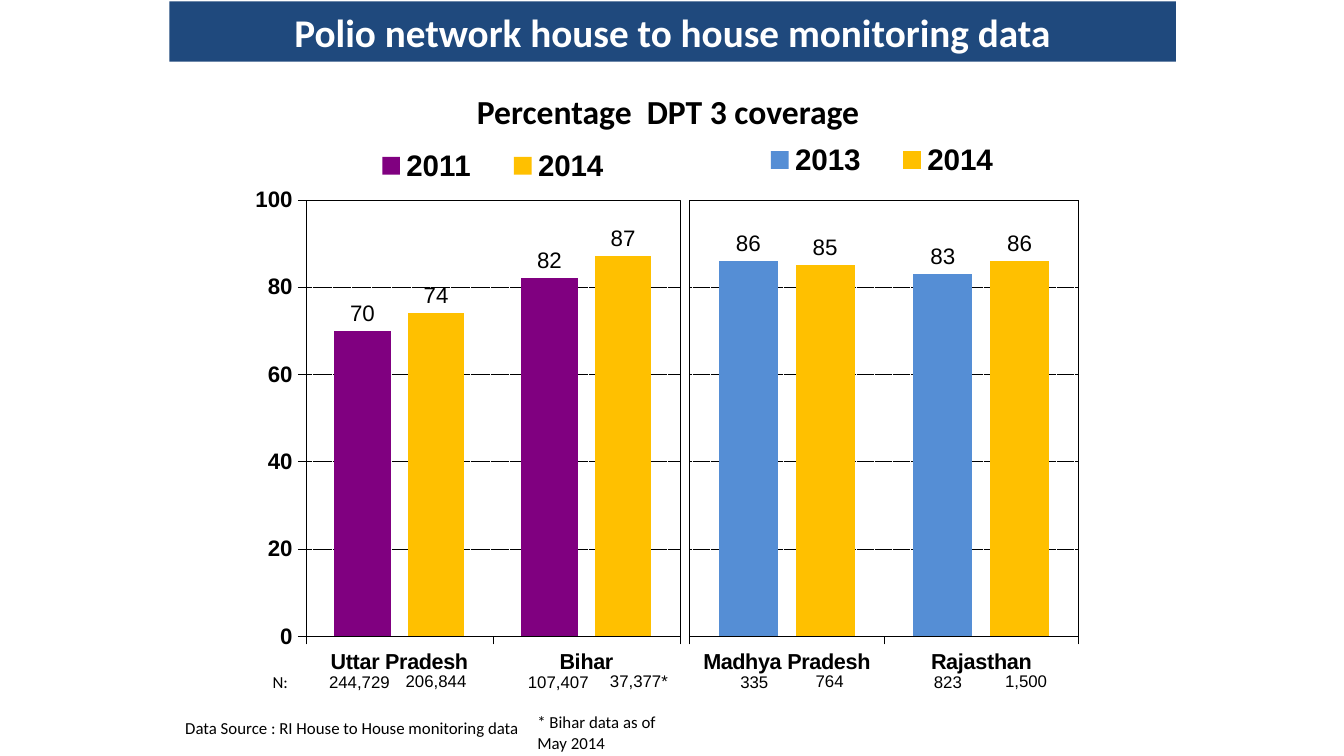
from pptx import Presentation
from pptx.chart.data import CategoryChartData
from pptx.dml.color import RGBColor
from pptx.enum.chart import XL_CHART_TYPE, XL_LABEL_POSITION, XL_LEGEND_POSITION, XL_TICK_MARK
from pptx.enum.dml import MSO_LINE
from pptx.enum.text import MSO_ANCHOR, PP_ALIGN
from pptx.oxml import parse_xml
from pptx.oxml.ns import nsdecls, qn
from pptx.util import Inches, Pt

BLACK = RGBColor(0x00, 0x00, 0x00)
WHITE = RGBColor(0xFF, 0xFF, 0xFF)
NAVY = RGBColor(0x1F, 0x49, 0x7D)
PURPLE = RGBColor(0x80, 0x00, 0x80)
BLUE = RGBColor(0x55, 0x8E, 0xD5)
GOLD = RGBColor(0xFF, 0xC0, 0x00)

HAIRLINE = Pt(0.15)
CHART_TOP, CHART_WIDTH, CHART_HEIGHT = 0.98, 3.29, 4.22


def set_font(font, size, bold=False, name="Arial", color=BLACK):
    font.name = name
    font.size = Pt(size)
    font.bold = bold
    font.color.rgb = color


def write(paragraph, text, size, **style):
    run = paragraph.add_run()
    run.text = text
    set_font(run.font, size, **style)


def add_title(slide, left, top, width, height):
    title = slide.shapes.title
    title.left, title.top = Inches(left), Inches(top)
    title.width, title.height = Inches(width), Inches(height)
    title.fill.solid()
    title.fill.fore_color.rgb = NAVY
    title.text_frame.vertical_anchor = MSO_ANCHOR.MIDDLE
    paragraph = title.text_frame.paragraphs[0]
    paragraph.alignment = PP_ALIGN.CENTER
    write(paragraph, "Polio network house to house monitoring data", 21,
          bold=True, name="Calibri", color=WHITE)


def add_text(slide, left, top, width, height, text, size=9,
             wrap=True, align=PP_ALIGN.LEFT, **style):
    box = slide.shapes.add_textbox(Inches(left), Inches(top), Inches(width), Inches(height))
    box.text_frame.word_wrap = wrap
    paragraph = box.text_frame.paragraphs[0]
    paragraph.alignment = align
    write(paragraph, text, size, **style)


def make_layout(x, y, width, height, inner=False):
    target = '<c:layoutTarget val="inner"/>' if inner else ""
    return parse_xml(
        f'<c:layout {nsdecls("c")}><c:manualLayout>{target}'
        '<c:xMode val="edge"/><c:yMode val="edge"/>'
        f'<c:x val="{x}"/><c:y val="{y}"/><c:w val="{width}"/><c:h val="{height}"/>'
        '</c:manualLayout></c:layout>')


def make_frame(line):
    return parse_xml(f'<c:spPr {nsdecls("c", "a")}><a:noFill/>{line}</c:spPr>')


def replace_layout(parent, index, layout):
    for old in parent.findall(qn("c:layout")):
        parent.remove(old)
    parent.insert(index, layout)


def style_axis(axis, size):
    axis.major_tick_mark = XL_TICK_MARK.OUTSIDE
    axis.minor_tick_mark = XL_TICK_MARK.NONE
    axis.format.line.color.rgb = BLACK
    axis.format.line.width = HAIRLINE
    set_font(axis.tick_labels.font, size, bold=True)


def style_value_axis(axis, visible):
    axis.minimum_scale, axis.maximum_scale, axis.major_unit = 0, 100, 20
    axis.has_major_gridlines = True
    gridline = axis.major_gridlines.format.line
    gridline.color.rgb = BLACK
    gridline.width = HAIRLINE
    gridline.dash_style = MSO_LINE.SQUARE_DOT
    axis.tick_labels.number_format = "0"
    axis.tick_labels.number_format_is_linked = False
    style_axis(axis, 12)
    axis.visible = visible


def style_series(series, color):
    series.format.fill.solid()
    series.format.fill.fore_color.rgb = color
    series.invert_if_negative = False
    labels = series.data_labels
    labels.show_value = True
    labels.number_format = "0"
    labels.number_format_is_linked = False
    labels.position = XL_LABEL_POSITION.OUTSIDE_END
    set_font(labels.font, 12)


def add_coverage_chart(slide, left, states, coverage, plot_box, legend_box, show_scale):
    data = CategoryChartData(number_format="0")
    data.categories = states
    for year, values, _ in coverage:
        data.add_series(year, values)
    chart = slide.shapes.add_chart(
        XL_CHART_TYPE.COLUMN_CLUSTERED, Inches(left), Inches(CHART_TOP),
        Inches(CHART_WIDTH), Inches(CHART_HEIGHT), data).chart
    chart.has_title = False
    set_font(chart.font, 15.9, bold=True, name="Times New Roman")

    plot = chart.plots[0]
    plot.gap_width, plot.overlap, plot.vary_by_categories = 100, -30, False
    for series, (_, _, color) in zip(plot.series, coverage):
        style_series(series, color)
    style_axis(chart.category_axis, 11.6)
    style_value_axis(chart.value_axis, show_scale)

    chart.has_legend = True
    chart.legend.position = XL_LEGEND_POSITION.TOP
    chart.legend.include_in_layout = False
    set_font(chart.legend.font, 15.9, bold=True)

    root = chart.element
    legend = root.find(".//" + qn("c:legend"))
    replace_layout(legend, 1, make_layout(*legend_box))
    plot_area = root.find(".//" + qn("c:plotArea"))
    replace_layout(plot_area, 0, make_layout(*plot_box, inner=True))
    plot_area.append(make_frame(
        f'<a:ln w="{HAIRLINE}"><a:solidFill><a:srgbClr val="{BLACK}"/></a:solidFill></a:ln>'))
    root.find(qn("c:chart")).addnext(make_frame("<a:ln><a:noFill/></a:ln>"))


def add_sample_sizes(slide, top):
    add_text(slide, 1.93, top, 0.32, 0.25, "N:", wrap=False, name="Calibri")
    samples = [
        (2.35, 0.66, "244,729"), (2.92, 0.66, "206,844"),
        (3.83, 0.66, "107,407"), (4.44, 0.64, "37,377*"),
        (5.41, 0.41, "335"), (5.97, 0.41, "764"),
        (6.85, 0.41, "823"), (7.38, 0.52, "1,500"),
    ]
    for index, (left, width, count) in enumerate(samples):
        add_text(slide, left, top - 0.01 * (index % 2), width, 0.25, count, wrap=False)


def add_footnotes(slide, left, top):
    add_text(slide, left, top + 0.04, 2.72, 0.25,
             "Data Source : RI House to House monitoring data", name="Calibri")
    add_text(slide, left + 2.62, top, 1.1, 0.4,
             "* Bihar data as of May 2014", name="Calibri")


def main():
    presentation = Presentation()
    presentation.slide_width = Inches(10)
    presentation.slide_height = presentation.slide_width * 9 // 16
    slide = presentation.slides.add_slide(presentation.slide_layouts[5])

    add_title(slide, 1.26, 0.01, 7.49, 0.45)
    add_text(slide, 2, 0.63, 6, 0.4, "Percentage  DPT 3 coverage ", 18,
             align=PP_ALIGN.CENTER, bold=True, name="Calibri")
    add_coverage_chart(
        slide, 1.9, ["Uttar Pradesh", "Bihar"],
        [("2011", (70, 82), PURPLE), ("2014", (74, 87), GOLD)],
        (0.11, 0.12, 0.85, 0.77), (0.21, 0.02, 0.65, 0.08), True)
    add_coverage_chart(
        slide, 4.9, ["Madhya Pradesh", "Rajasthan"],
        [("2013", (86, 83), BLUE), ("2014", (85, 86), GOLD)],
        (0.07, 0.12, 0.88, 0.77), (0.18, 0.01, 0.65, 0.08), False)
    add_sample_sizes(slide, 4.95)
    add_footnotes(slide, 1.28, 5.25)

    presentation.save("out.pptx")


if __name__ == "__main__":
    main()
